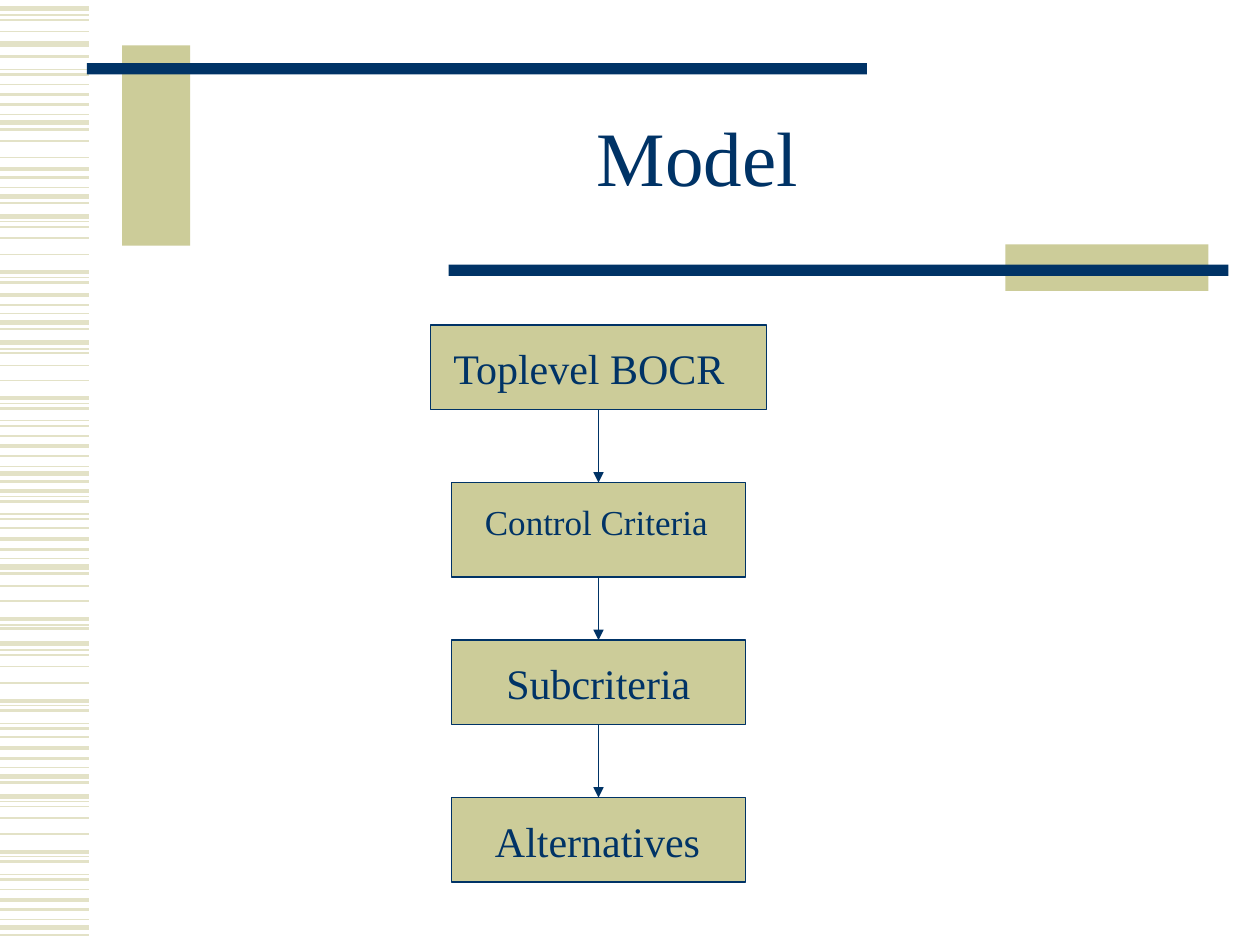
from itertools import pairwise

from pptx import Presentation
from pptx import util as u
from pptx.dml.color import RGBColor
from pptx.enum import shapes, text
from pptx.oxml.ns import qn
from lxml import etree

THEME = {
    "font": "Times New Roman",
    "navy": RGBColor.from_string("003366"),
    "sand": RGBColor.from_string("CCCC99"),
    "pale": RGBColor.from_string("E3E2C7"),
    "title": 44,
    "rule": 0.75,
}

TITLE = "Model"

# line weight in points: heights of the stripes on the left edge
STRIPES = {
    3: (0.07, 0.35, 0.97, 1.56, 1.72, 2.56, 2.72, 3.76, 4.5, 5.11, 6.16,
        6.32, 7.36),
    2.25: (0.75, 1.34, 2.16, 2.34, 3.16, 3.54, 3.9, 4.28, 4.91, 5.56, 5.94,
           6.76, 7.14),
    1.5: (0.45, 0.59, 0.83, 1.03, 1.41, 1.61, 2.24, 2.42, 2.61, 3.24, 3.38,
          3.62, 3.82, 3.98, 4.12, 4.36, 4.55, 4.99, 5.64, 5.78, 6.02, 6.21,
          6.84, 6.98, 7.22, 7.42),
    1: (0.16, 0.25, 0.67, 1.12, 1.25, 1.8, 1.89, 2.02, 2.8, 2.9, 3.02, 3.46,
        4.19, 4.65, 4.77, 5.2, 5.29, 5.42, 5.85, 6.4, 6.49, 6.62, 7.06),
    0.75: (0.12, 0.55, 0.91, 1.49, 1.76, 2.2, 2.49, 2.77, 3.2, 3.34, 3.7,
           3.94, 4.08, 4.43, 4.96, 5.16, 5.6, 5.74, 6.09, 6.36, 6.8, 6.94,
           7.3),
}
STRIPE_END = 0.71

# left, top, width, height, colour
BARS = [
    (0.97, 0.36, 0.54, 1.59, "sand"),
    (0.69, 0.5, 6.19, 0.09, "navy"),
    (7.98, 1.94, 1.61, 0.37, "sand"),
    (3.56, 2.1, 6.19, 0.09, "navy"),
]

# label, type size, box top, box width, box height, label left, label width
LEVELS = [
    ("Toplevel BOCR", 24, 2.58, 2.67, 0.67, 3.5, 2.5),
    ("Control Criteria", 20, 3.83, 2.33, 0.75, 3.75, 2.17),
    ("Subcriteria", 24, 5.08, 2.33, 0.67, 3.92, 2.17),
    ("Alternatives", 24, 6.33, 2.33, 0.67, 3.83, 2.17),
]
AXIS = 4.75
LABEL_DROP = 0.09


def inches(*sizes):
    return [u.Inches(size) for size in sizes]


def add_rect(slide, left, top, width, height, fill, line=None):
    rect = slide.shapes.add_shape(shapes.MSO_SHAPE.RECTANGLE,
                                  *inches(left, top, width, height))
    rect.shadow.inherit = False
    rect.fill.solid()
    rect.fill.fore_color.rgb = THEME[fill]
    if line:
        rect.line.color.rgb = THEME[line]
        rect.line.width = u.Pt(THEME["rule"])
    else:
        rect.line.fill.background()


def add_line(slide, start, end, color, weight, arrow=False):
    line = slide.shapes.add_connector(shapes.MSO_CONNECTOR.STRAIGHT,
                                      *inches(*start, *end))
    line.line.color.rgb = THEME[color]
    line.line.width = u.Pt(weight)
    if arrow:
        etree.SubElement(line.line._get_or_add_ln(), qn("a:tailEnd"),
                         type="triangle")
    etree.SubElement(line._element.spPr, qn("a:effectLst"))


def add_run(par, words, size):
    run = par.add_run()
    run.text = words
    run.font.name = THEME["font"]
    run.font.size = u.Pt(size)
    run.font.color.rgb = THEME["navy"]


def set_title(slide):
    title = slide.shapes.title
    title.left, title.top, title.width, title.height = inches(
        1.5, 0.67, 8.07, 1.25)
    frame = title.text_frame
    frame.vertical_anchor = text.MSO_ANCHOR.MIDDLE
    par = frame.paragraphs[0]
    par.alignment = text.PP_ALIGN.CENTER
    par.line_spacing = 0.85
    add_run(par, TITLE, THEME["title"])


def add_label(slide, words, size, left, top, width):
    height = size / 60 + 0.1
    box = slide.shapes.add_textbox(*inches(left, top, width, height))
    frame = box.text_frame
    frame.word_wrap = True
    frame.auto_size = text.MSO_AUTO_SIZE.SHAPE_TO_FIT_TEXT
    add_run(frame.paragraphs[0], words, size)


def main():
    deck = Presentation()
    deck.slide_width, deck.slide_height = inches(10, 7.5)
    slide = deck.slides.add_slide(deck.slide_layouts[5])

    for weight, rows in STRIPES.items():
        for y in rows:
            add_line(slide, (0, y), (STRIPE_END, y), "pale", weight)
    for bar in BARS:
        add_rect(slide, *bar)
    set_title(slide)

    for words, size, top, width, height, left, span in LEVELS:
        add_rect(slide, AXIS - width / 2, top, width, height, "sand", "navy")
        add_label(slide, words, size, left, top + LABEL_DROP, span)
    for upper, lower in pairwise(LEVELS):
        bottom = upper[2] + upper[4]
        add_line(slide, (AXIS, bottom), (AXIS, lower[2]), "navy",
                 THEME["rule"], arrow=True)

    deck.save("out.pptx")


if __name__ == "__main__":
    main()
